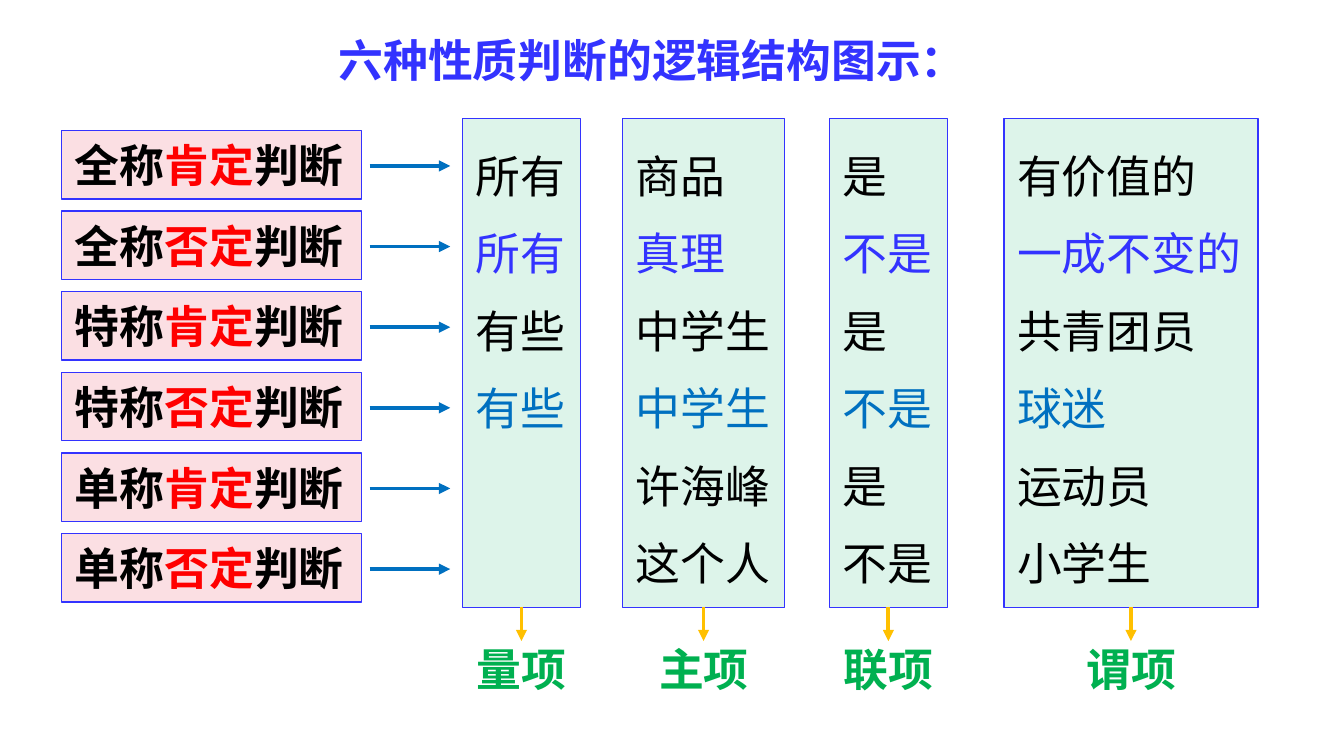
from lxml.etree import SubElement
from pptx import Presentation
from pptx.dml.color import RGBColor as RGB
from pptx.enum.shapes import MSO_CONNECTOR as Link, MSO_SHAPE as Kind
from pptx.enum.text import MSO_ANCHOR as Anchor, PP_ALIGN as Align
from pptx.oxml.ns import qn
from pptx.util import Inches as In, Pt

FONT = "Noto Sans CJK SC"
BLACK, BLUE, SKY, RED = "000000", "3333FF", "0070C0", "FF0000"
GREEN, GOLD, PINK, MINT = "00B050", "FFC000", "FBDFE3", "DDF4EA"

TITLE = "六种性质判断的逻辑结构图示："
SCOPES = ["全称", "特称", "单称"]
SIDES = ["肯定", "否定"]
INKS = [BLACK, BLUE, BLACK, SKY, BLACK, BLACK]
TERMS = [
    ("量项", 3.44, 0.88, ["所有", "所有", "有些", "有些"]),
    ("主项", 4.63, 1.21, ["商品", "真理", "中学生", "中学生", "许海峰", "这个人"]),
    ("联项", 6.17, 0.88, ["是", "不是", "是", "不是", "是", "不是"]),
    ("谓项", 7.47, 1.89, ["有价值的", "一成不变的", "共青团员", "球迷", "运动员", "小学生"]),
]
PAGE = 10
LEFT, WIDE, HIGH = 0.46, 2.23, 0.51
FIRST, STEP = 0.97, 0.6
TOP, TALL = 0.88, 3.64
LABEL = 0.88


def color(code):
    return RGB.from_string(code)


def write(shape, lines, font=FONT, bold=True, anchor=Anchor.MIDDLE, space=None):
    frame = shape.text_frame
    frame.word_wrap = False
    frame.vertical_anchor = anchor
    for i, line in enumerate(lines):
        para = frame.add_paragraph() if i else frame.paragraphs[0]
        para.alignment = Align.LEFT
        if space:
            para.line_spacing = Pt(space)
        for text, ink in line:
            run = para.add_run()
            run.text = text
            run.font.size = Pt(24)
            run.font.bold = bold
            run.font.name = font
            run.font.color.rgb = color(ink)
            SubElement(run.font._element, qn("a:ea"), typeface=FONT)


def box(x, y, w, h, fill):
    shape = slide.shapes.add_shape(Kind.RECTANGLE, In(x), In(y), In(w), In(h))
    shape.shadow.inherit = False
    shape.fill.solid()
    shape.fill.fore_color.rgb = color(fill)
    shape.line.color.rgb = color(BLUE)
    shape.line.width = Pt(0.75)
    return shape


def note(x, y, w, h):
    return slide.shapes.add_textbox(In(x), In(y), In(w), In(h))


def arrow(x, y, dx, dy, ink):
    link = slide.shapes.add_connector(
        Link.STRAIGHT, In(x), In(y), In(x + dx), In(y + dy))
    link.line.color.rgb = color(ink)
    link.line.width = Pt(2)
    SubElement(link.line._get_or_add_ln(), qn("a:tailEnd"), type="triangle")
    SubElement(link._element.spPr, qn("a:effectLst"))
    return link


deck = Presentation()
deck.slide_width, deck.slide_height = In(PAGE), In(PAGE * 9 / 16)
slide = deck.slides.add_slide(deck.slide_layouts[6])

write(note(2.42, 0.19, 4.91, HIGH), [[(TITLE, BLUE)]], font="Arial")

pairs = [(scope, side) for scope in SCOPES for side in SIDES]
for i, (scope, side) in enumerate(pairs):
    y = FIRST + i * STEP
    write(box(LEFT, y, WIDE, HIGH, PINK),
          [[(scope, BLACK), (side, RED), ("判断", BLACK)]])
    arrow(2.75, y + HIGH / 2 + 0.01, 0.6, 0, SKY)

for name, x, w, words in TERMS:
    term = box(x, TOP, w, TALL, MINT)
    write(term, [[pair] for pair in zip(words, INKS)],
          bold=False, anchor=Anchor.TOP, space=41.5)
    mid = x + w / 2
    arrow(mid, TOP + TALL, 0, 0.25, GOLD).begin_connect(term, 2)
    write(note(mid - LABEL / 2 + 0.01, 4.72, LABEL, HIGH), [[(name, GREEN)]])

deck.save("out.pptx")
